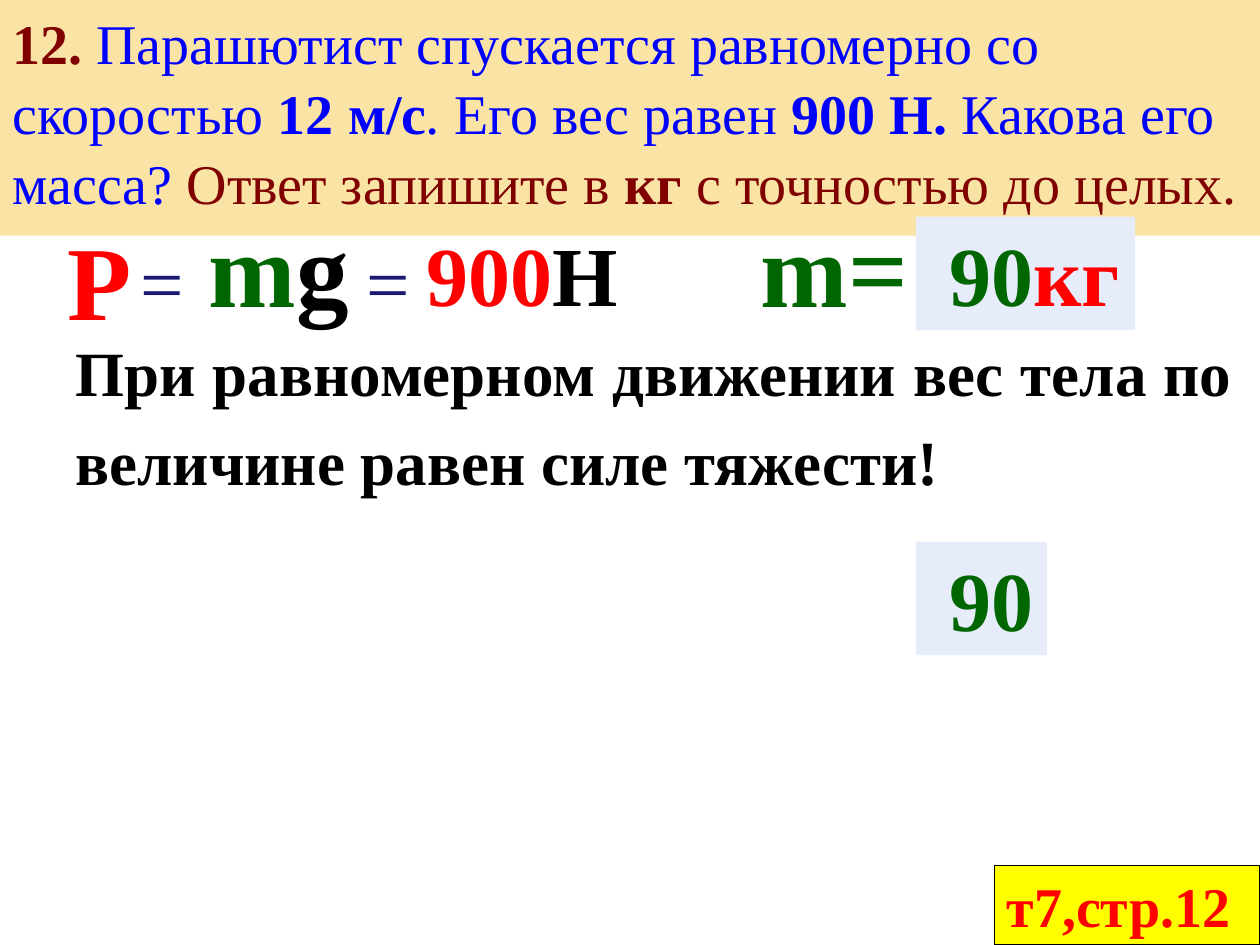
from pptx import Presentation
from pptx.dml.color import RGBColor
from pptx.enum.shapes import MSO_SHAPE
from pptx.enum.text import MSO_ANCHOR, MSO_AUTO_SIZE, PP_ALIGN
from pptx.util import Inches, Pt

FONT = "Times New Roman"
BLACK = RGBColor(0, 0, 0)
RED = RGBColor(0xFF, 0, 0)
GREEN = RGBColor(0, 0x66, 0)
BLUE = RGBColor(0, 0, 0xFF)
NAVY = RGBColor(0x1A, 0x1A, 0x70)
MAROON = RGBColor(0x80, 0, 0)
SAND = RGBColor(0xF9, 0xE3, 0xA5)
PALE = RGBColor(0xE6, 0xEC, 0xFA)
YELLOW = RGBColor(0xFF, 0xFF, 0)

# Runs: text, colour, style (b = bold, i = italic)
QUESTION = [
    ("12.", MAROON, "b"),
    (" Парашютист спускается равномерно со скоростью ", BLUE, ""),
    ("12 м/с", BLUE, "b"),
    (". ", BLUE, "i"),
    ("Его вес равен ", BLUE, ""),
    ("900 Н.", BLUE, "b"),
    (" Какова его масса?", BLUE, ""),
    (" Ответ запишите в ", MAROON, ""),
    ("кг ", MAROON, "b"),
    ("с точностью до целых.", MAROON, ""),
]
RULE = [("При равномерном движении вес тела по величине равен силе тяжести!", BLACK, "b")]
EQUALS = [("=", NAVY, "")]
ANSWER = [(" ", RED, "b"), ("90", GREEN, "b")]
PAGE = [("т7,стр.12", RED, "b")]

# Formula parts: left, top, width, size, runs
FORMULA = [
    (0.23, 1.66, 0.93, 60, [(" Р", RED, "b")]),
    (1.02, 1.81, 0.63, 44, EQUALS),
    (1.56, 1.56, 1.32, 60, [("m", GREEN, "b"), ("g", BLACK, "b")]),
    (2.81, 1.81, 0.63, 44, EQUALS),
    (3.12, 1.72, 1.9, 48, [(" 900", RED, "b"), ("Н", BLACK, "b")]),
    (5.94, 1.56, 1.38, 60, [("m=", GREEN, "b")]),
]
# Answer boxes: top, width, runs
ANSWER_LEFT = 7.27
ANSWERS = [
    (1.72, 1.74, ANSWER + [("кг", RED, "b")]),
    (4.3, 1.04, ANSWER),
]

prs = Presentation()
prs.slide_width, prs.slide_height = Inches(10), Inches(7.5)
s = prs.slides.add_slide(prs.slide_layouts[6])


def line_height(size):
    """Height in inches of a one-line box with default insets."""
    return round(size * 1.2 / 72 + 0.1, 2)


def add_text(left, top, width, height, size, runs, fill=None, line=None, wrap=True, grow=True):
    box = tuple(Inches(v) for v in (left, top, width, height))
    if fill is None:
        sp = s.shapes.add_textbox(*box)
    else:
        sp = s.shapes.add_shape(MSO_SHAPE.RECTANGLE, *box)
        sp.shadow.inherit = False
        sp.fill.solid()
        sp.fill.fore_color.rgb = fill
        if line is None:
            sp.line.fill.background()
        else:
            sp.line.color.rgb = line
            sp.line.width = Pt(0.75)
    tf = sp.text_frame
    tf.word_wrap = wrap
    tf.auto_size = MSO_AUTO_SIZE.SHAPE_TO_FIT_TEXT if grow else MSO_AUTO_SIZE.NONE
    tf.vertical_anchor = MSO_ANCHOR.TOP
    p = tf.paragraphs[0]
    p.alignment = PP_ALIGN.LEFT
    for text, color, style in runs:
        r = p.add_run()
        r.text = text
        r.font.name, r.font.size = FONT, Pt(size)
        r.font.bold, r.font.italic = "b" in style, "i" in style
        r.font.color.rgb = color
    return tf


# Question banner
tf = add_text(0, 0, 10, 1.87, 32, QUESTION, fill=SAND, grow=False)
tf.paragraphs[0].line_spacing = 1.04
tf.paragraphs[0].space_after = Pt(10)

# Formula row
for left, top, width, size, runs in FORMULA:
    add_text(left, top, width, line_height(size), size, runs, wrap=runs is EQUALS)

# Rule under the formula
tf = add_text(0, 2.5, 10, 1.33, 36, RULE, grow=False)
tf.margin_left, tf.margin_right = Inches(0.6), Inches(0.22)
p = tf.paragraphs[0]
p.alignment = PP_ALIGN.JUSTIFY
p.line_spacing = 1.17
p.space_before, p.space_after = Pt(15.2), Pt(10)

# Answers
for top, width, runs in ANSWERS:
    add_text(ANSWER_LEFT, top, width, line_height(48), 48, runs, fill=PALE, wrap=False)

# Page reference in the bottom right corner
width, height = 2.11, line_height(32)
add_text(10 - width, 7.5 - height, width, height, 32, PAGE, fill=YELLOW, line=BLACK)

prs.save("out.pptx")
